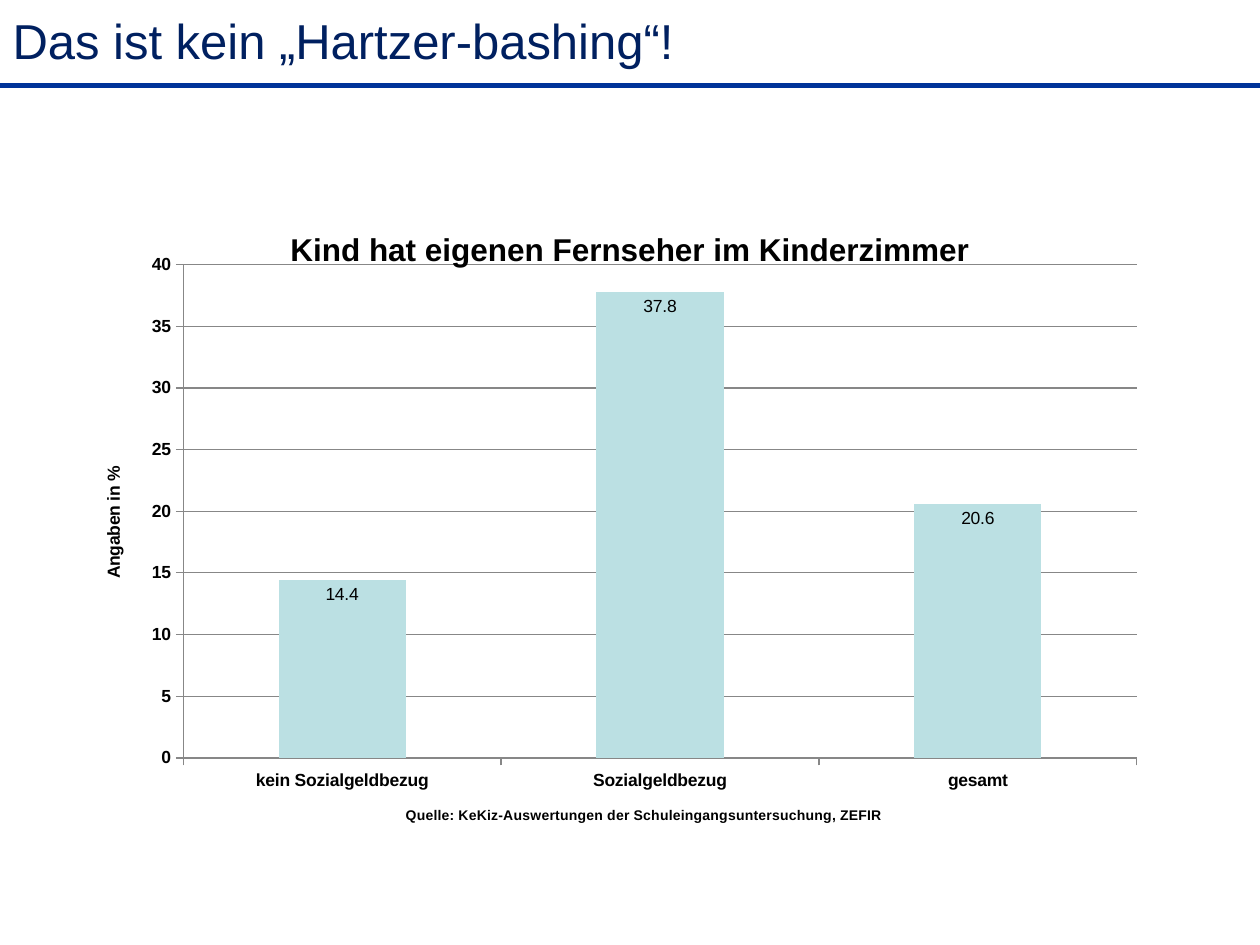
from lxml.etree import SubElement
from pptx import Presentation
from pptx.chart.data import CategoryChartData
from pptx.dml.color import RGBColor
from pptx.enum.chart import XL_CHART_TYPE, XL_LABEL_POSITION, XL_TICK_MARK
from pptx.enum.shapes import MSO_CONNECTOR
from pptx.enum.text import MSO_ANCHOR, MSO_AUTO_SIZE, PP_ALIGN
from pptx.oxml.ns import qn
from pptx.util import Cm, Pt

HEAD = "Das ist kein „Hartzer-bashing“!"
NAME = "Kind hat eigenen Fernseher im Kinderzimmer"
SOURCE = "Quelle: KeKiz-Auswertungen der Schuleingangsuntersuchung, ZEFIR"
UNIT = "Angaben in %"
DATA = {"kein Sozialgeldbezug": 14.4, "Sozialgeldbezug": 37.8, "gesamt": 20.6}
PLOT = {"x": 0.106, "y": 0.095, "w": 0.841, "h": 0.771}
WIDTH, HEIGHT = Cm(25.4), Cm(19.05)
GREY, BLACK = "878787", "000000"


def paint(item, color):
    item.solid()
    item.fore_color.rgb = RGBColor.from_string(color)


def style(font, size=10, color=BLACK, bold=False):
    font.name = "Arial"
    font.size = Pt(size)
    font.bold = bold
    paint(font.fill, color)


def write(frame, text, align=None, **look):
    para = frame.paragraphs[0]
    if align is not None:
        para.alignment = align
    run = para.add_run()
    run.text = text
    style(run.font, **look)


def rule(line, color, width):
    paint(line.fill, color)
    line.width = Pt(width)


def place(chart):
    area = chart.plots[0]._element.getparent()
    for old in area.findall(qn("c:layout")):
        area.remove(old)
    layout = SubElement(area, qn("c:layout"))
    area.insert(0, layout)
    box = SubElement(layout, qn("c:manualLayout"))
    parts = {"layoutTarget": "inner", "xMode": "edge", "yMode": "edge", **PLOT}
    for tag, value in parts.items():
        SubElement(box, qn("c:" + tag)).set("val", str(value))


deck = Presentation()
deck.slide_width, deck.slide_height = WIDTH, HEIGHT
slide = deck.slides.add_slide(deck.slide_layouts[5])

bar = slide.shapes.add_connector(
    MSO_CONNECTOR.STRAIGHT, WIDTH, Cm(1.73), 0, Cm(1.73))
rule(bar.line, "003399", 3)
SubElement(bar._element.spPr, qn("a:effectLst"))

title = slide.shapes.title
title.left, title.top, title.width, title.height = 0, 0, WIDTH, Cm(1.6)
frame = title.text_frame
frame.auto_size = MSO_AUTO_SIZE.NONE
frame.vertical_anchor = MSO_ANCHOR.MIDDLE
write(frame, HEAD, align=PP_ALIGN.LEFT, size=28, color="002060")

data = CategoryChartData(number_format="0.0")
data.categories = list(DATA)
data.add_series(NAME, list(DATA.values()))
chart = slide.shapes.add_chart(
    XL_CHART_TYPE.COLUMN_CLUSTERED, Cm(1.27), Cm(4.11), Cm(22.86), Cm(12.9),
    data).chart
style(chart.font)
chart.has_legend = False
write(chart.chart_title.text_frame, NAME, size=18, bold=True)
chart.chart_title.include_in_layout = True
SubElement(chart.chart_title._element, qn("c:overlay")).set("val", "1")
place(chart)

for axis, text, size in (
        (chart.category_axis, SOURCE, 8), (chart.value_axis, UNIT, 10)):
    write(axis.axis_title.text_frame, text, size=size, bold=True)
    style(axis.tick_labels.font, bold=True)
    axis.major_tick_mark = XL_TICK_MARK.OUTSIDE
    axis.minor_tick_mark = XL_TICK_MARK.NONE
    rule(axis.format.line, GREY, 0.75)

scale = chart.value_axis
scale.minimum_scale, scale.maximum_scale, scale.major_unit = 0, 40, 5
scale.tick_labels.number_format = "0"
scale.tick_labels.number_format_is_linked = False
rule(scale.major_gridlines.format.line, GREY, 0.75)

plot = chart.plots[0]
plot.gap_width = 150
plot.vary_by_categories = False
paint(plot.series[0].format.fill, "BBE0E3")
plot.has_data_labels = True
tags = plot.data_labels
tags.show_value = True
tags.position = XL_LABEL_POSITION.INSIDE_END
tags.number_format = "0.0"
tags.number_format_is_linked = False
style(tags.font)

deck.save("out.pptx")
